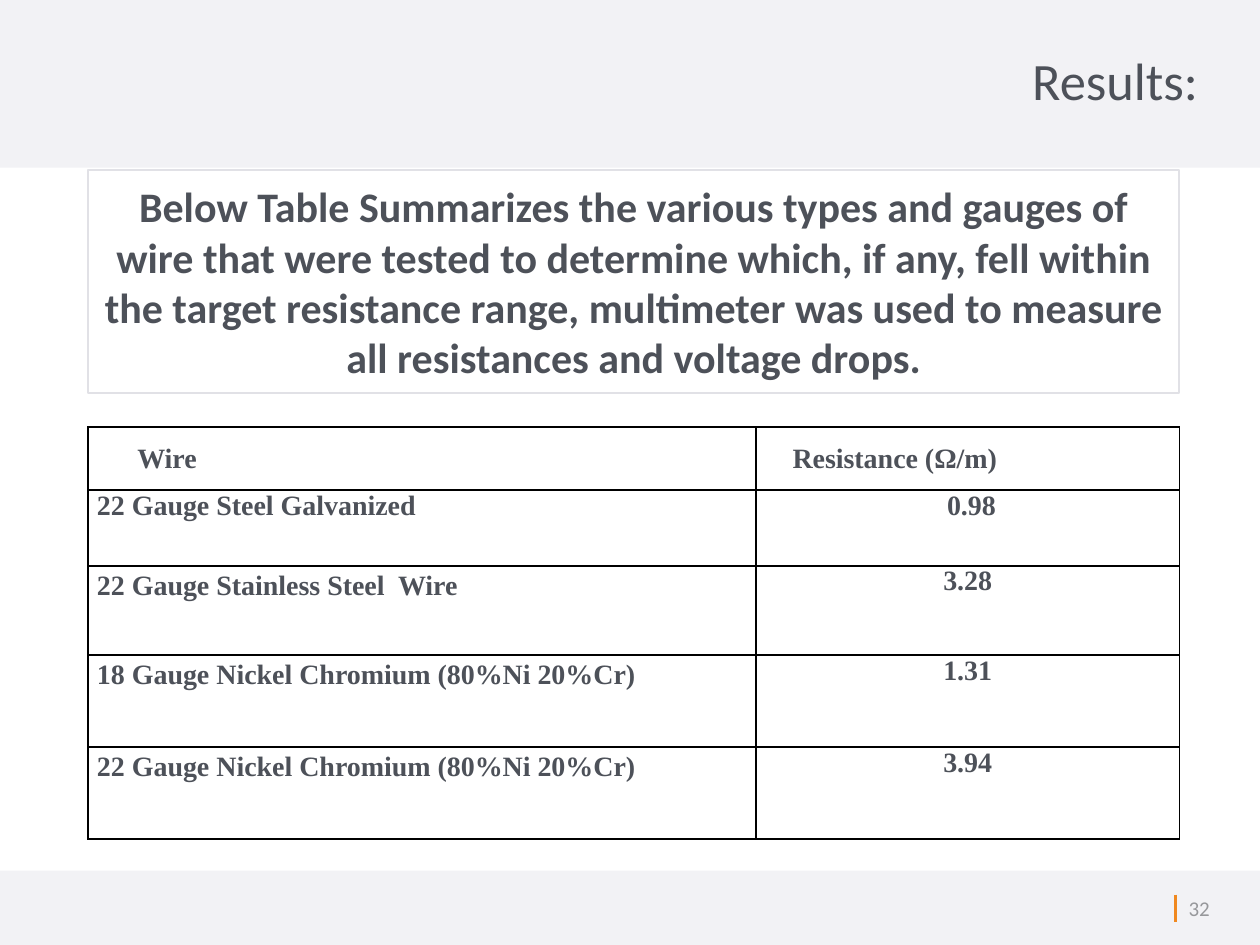
import pptx
import pptx.dml.color
import pptx.enum.shapes
import pptx.enum.text
import pptx.oxml
import pptx.oxml.ns
import pptx.util

Inches = pptx.util.Inches
RGBColor = pptx.dml.color.RGBColor
Align = pptx.enum.text.PP_ALIGN
Anchor = pptx.enum.text.MSO_ANCHOR

BACKGROUND = RGBColor(0xF2, 0xF2, 0xF5)
WHITE = RGBColor(0xFF, 0xFF, 0xFF)
INK = RGBColor(0x4D, 0x51, 0x59)
BOX_LINE = RGBColor(0xE1, 0xE1, 0xE6)
ORANGE = RGBColor(0xF0, 0x89, 0x20)
NUMBER_GRAY = RGBColor(0x97, 0x98, 0x9B)
BLACK = RGBColor(0, 0, 0)

SUMMARY = (
    "Below Table Summarizes the various types and gauges of wire that were tested "
    "to determine which, if any, fell within the target resistance range, "
    "multimeter was used to measure all resistances and voltage drops."
)
HEADERS = [("Wire", 0.39), ("Resistance (Ω/m)", 0.29)]
WIRES = [
    ("22 Gauge Steel Galvanized", "0.98", 1.0, 0.06),
    ("22 Gauge Stainless Steel  Wire", "3.28", 1.15, 0),
    ("18 Gauge Nickel Chromium (80%Ni 20%Cr)", "1.31", 1.15, 0),
    ("22 Gauge Nickel Chromium (80%Ni 20%Cr)", "3.94", 1.15, 0),
]
COLUMN_WIDTHS = [5.3, 3.36]
ROW_HEIGHTS = [0.5, 0.6, 0.71, 0.73, 0.73]


def write_text(text_frame, text, size, color, align, font="Calibri", bold=False):
    text_frame.text = text
    paragraph = text_frame.paragraphs[0]
    paragraph.alignment = align
    paragraph.font.name = font
    paragraph.font.size = pptx.util.Pt(size)
    paragraph.font.bold = bold
    paragraph.font.color.rgb = color
    return paragraph


def place(shape, left, top, width, height):
    shape.left, shape.top = Inches(left), Inches(top)
    shape.width, shape.height = Inches(width), Inches(height)


def add_title(slide, text):
    title = slide.shapes.title
    place(title, 3.73, 0.25, 5.88, 0.83)
    title.text_frame.vertical_anchor = Anchor.MIDDLE
    paragraph = write_text(title.text_frame, text, 30, INK, Align.RIGHT)
    paragraph.line_spacing = 0.9


def add_rectangle(slide, left, top, width, height, line_color=None):
    shape = slide.shapes.add_shape(
        pptx.enum.shapes.MSO_SHAPE.RECTANGLE,
        Inches(left), Inches(top), Inches(width), Inches(height),
    )
    shape.shadow.inherit = False
    shape.fill.solid()
    shape.fill.fore_color.rgb = WHITE
    if line_color is None:
        shape.line.fill.background()
    else:
        shape.line.color.rgb = line_color
        shape.line.width = pptx.util.Pt(1)
    return shape


def add_summary(slide):
    box = add_rectangle(slide, 0.7, 1.35, 8.66, 1.77, BOX_LINE)
    box.text_frame.word_wrap = True
    box.text_frame.vertical_anchor = Anchor.MIDDLE
    write_text(box.text_frame, SUMMARY, 24, INK, Align.CENTER, bold=True)


def add_page_number(slide, number):
    line = slide.shapes.add_connector(
        pptx.enum.shapes.MSO_CONNECTOR.STRAIGHT,
        Inches(9.33), Inches(7.1), Inches(9.33), Inches(7.32),
    )
    line.line.color.rgb = ORANGE
    line.line.width = pptx.util.Pt(1.5)
    properties = line._element.spPr
    properties.append(properties.makeelement(pptx.oxml.ns.qn("a:effectLst"), {}))
    box = slide.shapes.add_textbox(
        Inches(7.45), Inches(7.09), Inches(2.25), Inches(0.23)
    )
    box.text_frame.word_wrap = True
    box.text_frame.vertical_anchor = Anchor.MIDDLE
    write_text(box.text_frame, number, 12, NUMBER_GRAY, Align.RIGHT)


def add_borders(cell):
    properties = cell._tc.get_or_add_tcPr()
    for index, side in enumerate(("lnL", "lnR", "lnT", "lnB")):
        border = pptx.oxml.parse_xml(
            f'<a:{side} {pptx.oxml.ns.nsdecls("a")} w="12700"><a:solidFill>'
            f'<a:srgbClr val="{BLACK}"/></a:solidFill></a:{side}>'
        )
        properties.insert(index, border)


def fill_cell(cell, text, align, indent=0, spacing=1.0, anchor=Anchor.TOP):
    cell.margin_left = Inches(indent)
    cell.margin_right = cell.margin_top = cell.margin_bottom = 0
    cell.vertical_anchor = anchor
    cell.fill.background()
    add_borders(cell)
    paragraph = write_text(
        cell.text_frame, text, 16, INK, align, "Times New Roman", True
    )
    paragraph.line_spacing = spacing


def add_wire_table(slide):
    table = slide.shapes.add_table(
        len(ROW_HEIGHTS), len(COLUMN_WIDTHS), Inches(0.7), Inches(3.39),
        Inches(sum(COLUMN_WIDTHS)), Inches(sum(ROW_HEIGHTS)),
    ).table
    table.first_row = False
    table.horz_banding = False
    for column, width in zip(table.columns, COLUMN_WIDTHS):
        column.width = Inches(width)
    for row, height in zip(table.rows, ROW_HEIGHTS):
        row.height = Inches(height)
    for column_index, (header, indent) in enumerate(HEADERS):
        fill_cell(table.cell(0, column_index), header, Align.LEFT, indent,
                  anchor=Anchor.MIDDLE)
    for row_index, (wire, resistance, spacing, shift) in enumerate(WIRES, 1):
        fill_cell(table.cell(row_index, 0), wire, Align.JUSTIFY, 0.07, spacing)
        fill_cell(table.cell(row_index, 1), resistance, Align.CENTER, shift)


def main():
    presentation = pptx.Presentation()
    presentation.slide_width = Inches(10)
    presentation.slide_height = Inches(7.5)
    slide = presentation.slides.add_slide(presentation.slide_layouts[5])
    slide.background.fill.solid()
    slide.background.fill.fore_color.rgb = BACKGROUND
    add_rectangle(slide, 0, 1.33, 10, 5.58)
    add_page_number(slide, "32")
    add_title(slide, "Results:")
    add_summary(slide)
    add_wire_table(slide)
    presentation.save("out.pptx")


if __name__ == "__main__":
    main()
